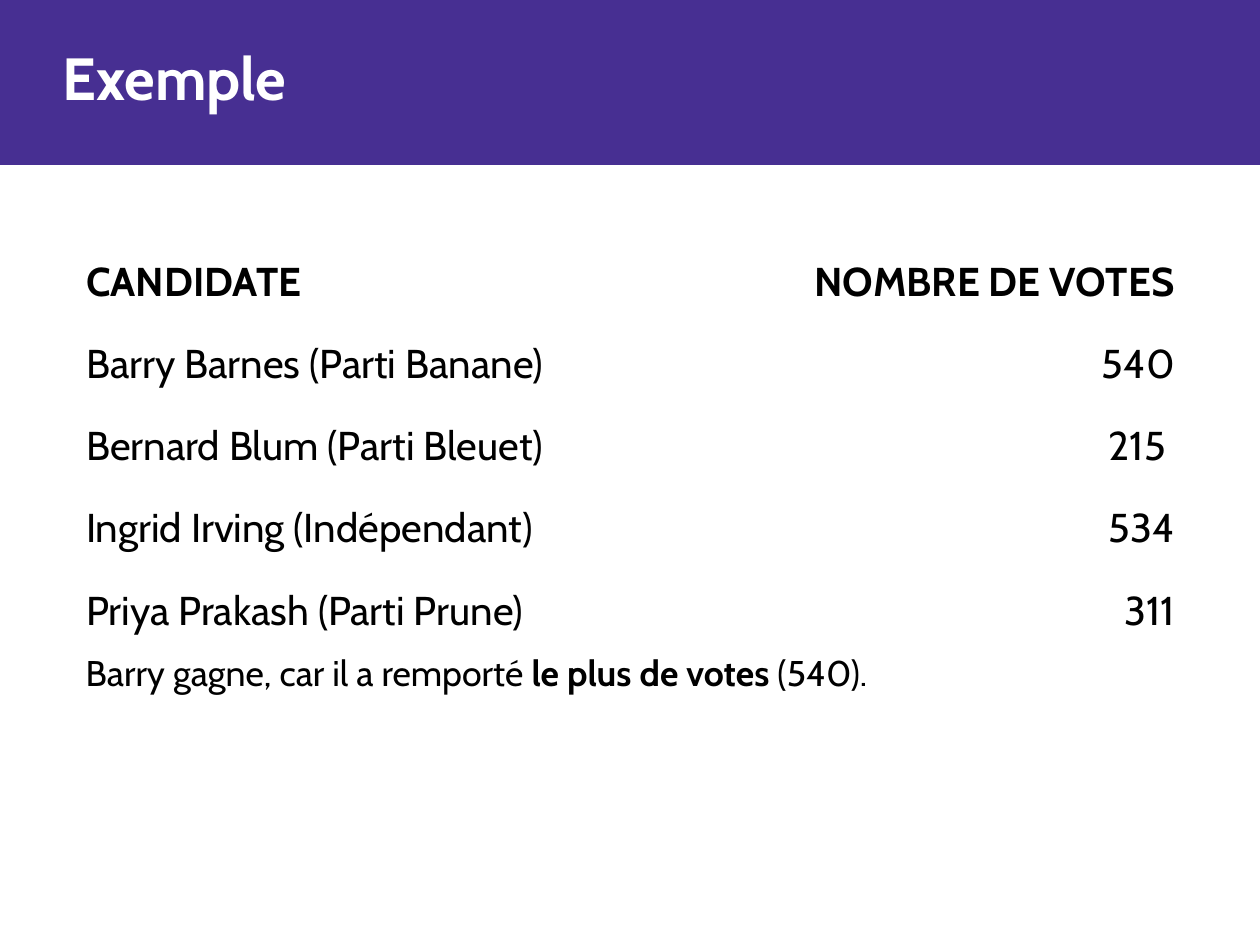
"""Build the slide that shows the votes of an example election."""
from dataclasses import dataclass

from lxml import etree
from pptx import Presentation
from pptx.dml.color import RGBColor
from pptx.enum.shapes import MSO_SHAPE
from pptx.enum.text import MSO_ANCHOR, MSO_AUTO_SIZE, PP_ALIGN
from pptx.oxml.ns import qn
from pptx.util import Emu, Pt

RECTANGLE = MSO_SHAPE.RECTANGLE
TOP, MIDDLE = MSO_ANCHOR.TOP, MSO_ANCHOR.MIDDLE
LEFT, RIGHT = PP_ALIGN.LEFT, PP_ALIGN.RIGHT
NO_AUTOFIT = MSO_AUTO_SIZE.NONE
EMU_PER_PX = 914400 / 126
TITLE_AND_CONTENT = 1


@dataclass(frozen=True)
class Theme:
    """Colours, font and type sizes of the slide."""

    purple: str = "472F92"
    white: str = "FFFFFF"
    black: str = "000000"
    font: str = "Cabin"
    title_size: float = 34
    table_size: float = 23
    body_size: float = 20.4
    border_width: float = 0.75


def px(length):
    """Turn pixels into EMU."""
    return Emu(round(length * EMU_PER_PX))


class SlideBuilder:
    """Holds the theme and the current slide."""

    def __init__(self, presentation, theme):
        """Add a slide with a title and a body."""
        self.theme = theme
        layout = presentation.slide_layouts[TITLE_AND_CONTENT]
        self.slide = presentation.slides.add_slide(layout)

    def style(self, paragraph, size, color, spacing, alignment=LEFT, bold=False):
        """Format a whole paragraph."""
        paragraph.alignment = alignment
        paragraph.line_spacing = spacing
        paragraph.space_before = Pt(0)
        font = paragraph.font
        font.name, font.size, font.bold = self.theme.font, Pt(size), bold
        font.color.rgb = RGBColor.from_string(color)

    def place(self, shape, box, anchor):
        """Move a placeholder and return its first paragraph."""
        shape.left, shape.top, shape.width, shape.height = map(px, box)
        frame = shape.text_frame
        frame.word_wrap = True
        frame.auto_size = NO_AUTOFIT
        frame.vertical_anchor = anchor
        return frame.paragraphs[0]

    def banner(self, box):
        """Draw the coloured band behind the title."""
        band = self.slide.shapes.add_shape(RECTANGLE, *map(px, box))
        band.shadow.inherit = False
        band.fill.solid()
        band.fill.fore_color.rgb = RGBColor.from_string(self.theme.purple)
        band.line.fill.background()
        self.slide.shapes.title.element.addprevious(band.element)

    def title(self, text, box):
        """Fill the title placeholder."""
        paragraph = self.place(self.slide.shapes.title, box, MIDDLE)
        paragraph.text = text
        self.style(paragraph, self.theme.title_size, self.theme.white, 0.9, bold=True)

    def body(self, runs, box):
        """Fill the body placeholder with (text, bold) runs and no bullet."""
        paragraph = self.place(self.slide.placeholders[1], box, TOP)
        properties = paragraph._p.get_or_add_pPr()
        properties.set("marL", "0")
        properties.set("indent", "0")
        etree.SubElement(properties, qn("a:buNone"))
        self.style(paragraph, self.theme.body_size, self.theme.black, 1.15)
        for text, bold in runs:
            run = paragraph.add_run()
            run.text = text
            if bold:
                run.font.bold = True

    def borders(self, cell):
        """Give a cell thin borders on its four sides."""
        properties = cell._tc.get_or_add_tcPr()
        for side in ("lnL", "lnR", "lnT", "lnB"):
            line = etree.SubElement(properties, qn(f"a:{side}"), w=str(Pt(self.theme.border_width)))
            fill = etree.SubElement(line, qn("a:solidFill"))
            etree.SubElement(fill, qn("a:srgbClr"), val=self.theme.white)

    def table(self, rows, left, top, widths, row_height, margin):
        """Add a plain table with a bold first row and figures on the right."""
        box = left, top, sum(widths), row_height * len(rows)
        table = self.slide.shapes.add_table(len(rows), len(widths), *map(px, box)).table
        table.first_row = table.horz_banding = False
        for column, width in zip(table.columns, widths):
            column.width = px(width)
        for row_index, row in enumerate(rows):
            table.rows[row_index].height = px(row_height)
            for column_index, text in enumerate(row):
                cell = table.cell(row_index, column_index)
                cell.margin_left = cell.margin_right = px(margin)
                cell.margin_top = cell.margin_bottom = px(margin)
                self.borders(cell)
                cell.fill.background()
                paragraph = cell.text_frame.paragraphs[0]
                paragraph.text = text
                alignment = RIGHT if column_index else LEFT
                self.style(paragraph, self.theme.table_size, self.theme.black, 1.15,
                           alignment, bold=row_index == 0)


def main():
    """Build and save the presentation."""
    presentation = Presentation()
    presentation.slide_width, presentation.slide_height = px(1260), px(945)
    builder = SlideBuilder(presentation, Theme())
    builder.banner((0, 0, 1260, 165))
    builder.title("Exemple", (50, 10, 1168, 142))
    votes = [
        ("CANDIDATE", "NOMBRE DE VOTES"),
        ("Barry Barnes (Parti Banane)", "540"),
        ("Bernard Blum (Parti Bleuet)", "215 "),
        ("Ingrid Irving (Indépendant)", "534"),
        ("Priya Prakash (Parti Prune)", "311"),
    ]
    builder.table(votes, left=73, top=237, widths=(718, 397), row_height=81, margin=13)
    conclusion = [
        ("Barry gagne, car il a remporté ", False),
        ("le plus de votes", True),
        (" (540).", False),
    ]
    builder.body(conclusion, (73, 638, 925, 71))
    presentation.save("out.pptx")


if __name__ == "__main__":
    main()
